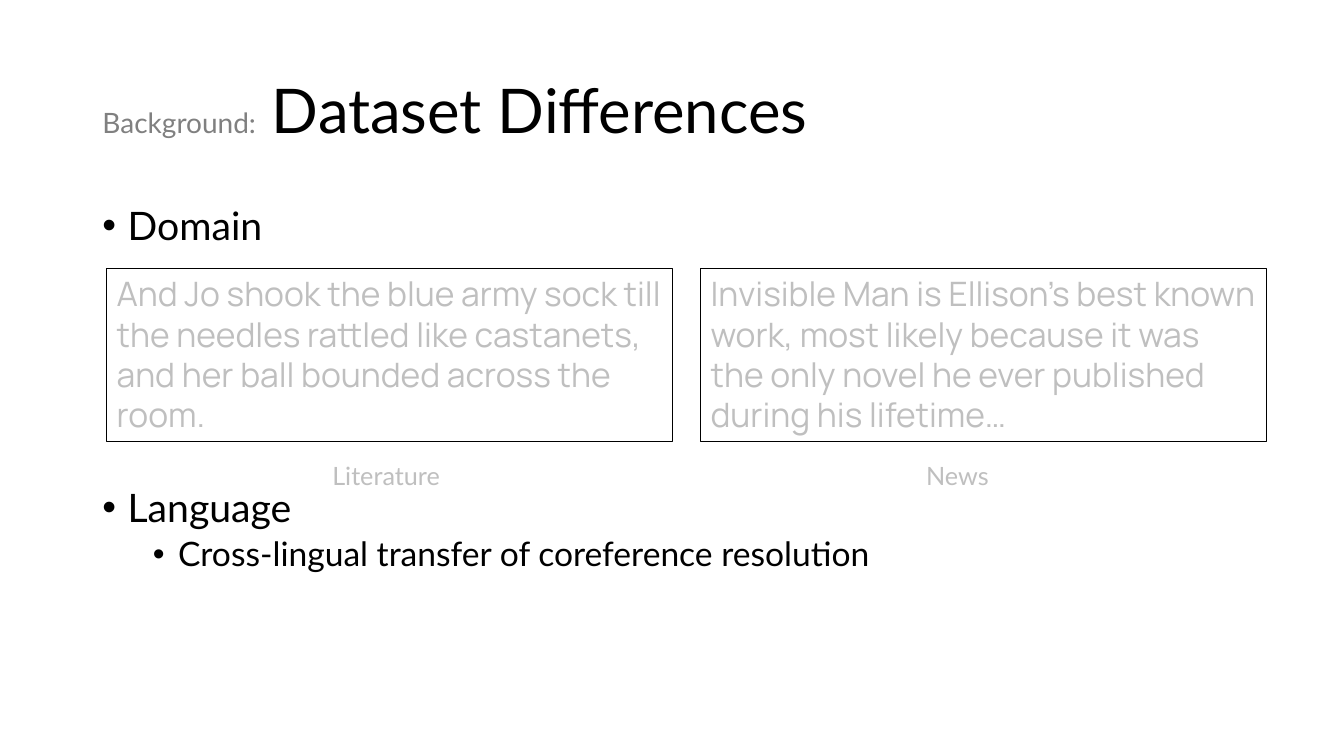
from lxml.etree import SubElement
from pptx import Presentation
from pptx.dml.color import RGBColor
from pptx.enum.shapes import MSO_SHAPE
from pptx.enum.text import MSO_ANCHOR, MSO_AUTO_SIZE, PP_ALIGN
from pptx.oxml.ns import qn
from pptx.util import Pt

TITLE = [("Background:", 20, "808080"), (" Dataset Differences", 44, "000000")]
BULLETS = [
    ("Domain", 0, 10),
    ("Language", 0, 171),
    ("Cross-lingual transfer of coreference resolution", 1, 5),
]
EXCERPTS = [
    ("Literature", "And Jo shook the blue army sock till the needles rattled like "
     "castanets, and her ball bounded across the room."),
    ("News", "Invisible Man is Ellison’s best known work, most likely because it was "
     "the only novel he ever published during his lifetime…"),
]
LEVEL_SIZES = [28, 24]
LEVEL_INDENTS = [18, 54]

CONTENT_LEFT, CONTENT_WIDTH = 66, 828
EXCERPT_LEFT, EXCERPT_TOP = 76.3, 191.5
EXCERPT_WIDTH, EXCERPT_HEIGHT, EXCERPT_GAP = 404, 123.8, 20.2
GENRE_OFFSET, GENRE_TOP, GENRE_WIDTH, GENRE_HEIGHT = 154, 325.4, 95, 29


def color(value):
    return RGBColor.from_string(value)


def style(run, size, value, font="Lato"):
    run.font.name = font
    run.font.size = Pt(size)
    run.font.color.rgb = color(value)


def place(holder, top, height, anchor):
    holder.left, holder.top = Pt(CONTENT_LEFT), Pt(top)
    holder.width, holder.height = Pt(CONTENT_WIDTH), Pt(height)
    frame = holder.text_frame
    frame.auto_size = MSO_AUTO_SIZE.NONE
    frame.vertical_anchor = anchor
    return frame


def set_bullet(paragraph, indent):
    properties = paragraph._p.get_or_add_pPr()
    properties.set("marL", str(Pt(indent)))
    properties.set("indent", str(-Pt(18)))
    SubElement(properties, qn("a:buFont"), typeface="Arial")
    SubElement(properties, qn("a:buChar"), char="•")


def fill_text(frame, text, size, font):
    frame.word_wrap = True
    paragraph = frame.paragraphs[0]
    paragraph.text = text
    paragraph.alignment = PP_ALIGN.LEFT
    style(paragraph.runs[0], size, "BFBFBF", font)


def main():
    deck = Presentation()
    deck.slide_width, deck.slide_height = Pt(960), Pt(540)
    slide = deck.slides.add_slide(deck.slide_layouts[1])

    heading = place(slide.shapes.title, 28.8, 104.4, MSO_ANCHOR.MIDDLE).paragraphs[0]
    heading.alignment = PP_ALIGN.LEFT
    heading.line_spacing = 0.9
    for text, size, value in TITLE:
        run = heading.add_run()
        run.text = text
        style(run, size, value)

    outline = place(slide.placeholders[1], 143.8, 342.6, MSO_ANCHOR.TOP)
    outline.text = "\n".join(text for text, _, _ in BULLETS)
    for paragraph, (_, level, space) in zip(outline.paragraphs, BULLETS):
        paragraph.level = level
        paragraph.line_spacing = 0.9
        paragraph.space_before = Pt(space)
        set_bullet(paragraph, LEVEL_INDENTS[level])
        style(paragraph.runs[0], LEVEL_SIZES[level], "000000")

    for column, (genre, excerpt) in enumerate(EXCERPTS):
        left = EXCERPT_LEFT + column * (EXCERPT_WIDTH + EXCERPT_GAP)
        box = slide.shapes.add_shape(MSO_SHAPE.RECTANGLE, Pt(left), Pt(EXCERPT_TOP),
                                     Pt(EXCERPT_WIDTH), Pt(EXCERPT_HEIGHT))
        box.shadow.inherit = False
        box.fill.background()
        box.line.color.rgb = color("000000")
        box.line.width = Pt(0.75)
        box.text_frame.vertical_anchor = MSO_ANCHOR.TOP
        fill_text(box.text_frame, excerpt, 24, "Manrope")

        label = slide.shapes.add_textbox(Pt(left + GENRE_OFFSET), Pt(GENRE_TOP),
                                         Pt(GENRE_WIDTH), Pt(GENRE_HEIGHT))
        fill_text(label.text_frame, genre, 18, "Lato")

    deck.save("out.pptx")


if __name__ == "__main__":
    main()
